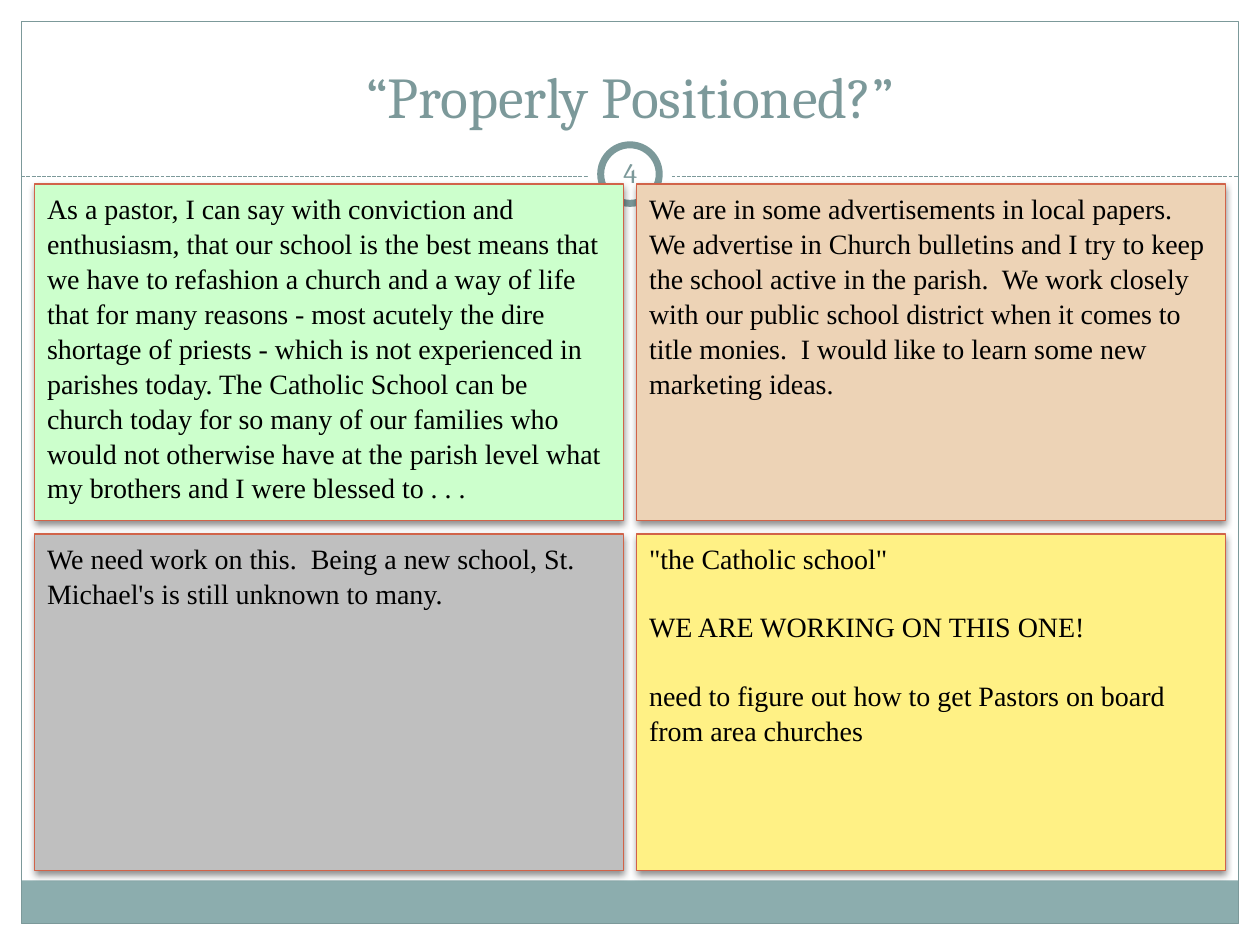
from dataclasses import dataclass
from lxml.etree import SubElement
from pptx import Presentation
from pptx.dml.color import RGBColor as RGB
from pptx.enum.dml import MSO_LINE as Dash
from pptx.enum.shapes import MSO_CONNECTOR as Link, MSO_SHAPE as Kind
from pptx.enum.text import MSO_ANCHOR as Anchor, PP_ALIGN as Align
from pptx.oxml.ns import qn
from pptx.util import Cm, Pt


@dataclass(frozen=True)
class Theme:
    """Colours, fonts and type sizes of the slide."""
    teal: str = "7C999A"
    band: str = "8CADAE"
    edge: str = "D16349"
    ink: str = "000000"
    paper: str = "FFFFFF"
    head: str = "Cambria"
    body: str = "Times New Roman"
    big: int = 33
    small: int = 16
    thin: float = 0.75
    thick: int = 4


THEME = Theme()
CARDS = [
    ("CCFFCC", ["As a pastor, I can say with conviction and enthusiasm, that our school is "
                "the best means that we have to refashion a church and a way of life that for "
                "many reasons - most acutely the dire shortage of priests - which is not "
                "experienced in parishes today. The Catholic School can be church today for so "
                "many of our families who would not otherwise have at the parish level what my "
                "brothers and I were blessed to . . ."]),
    ("EDD3B6", ["We are in some advertisements in local papers.  We advertise in Church "
                "bulletins and I try to keep the school active in the parish.  We work closely "
                "with our public school district when it comes to title monies.  I would like "
                "to learn some new marketing ideas."]),
    ("BFBFBF", ["We need work on this.  Being a new school, St. Michael's is still unknown "
                "to many."]),
    ("FFF185", ['"the Catholic school"', "WE ARE WORKING ON THIS ONE!",
                "need to figure out how to get Pastors on board from area churches"]),
]


def write(shape, lines, font=THEME.body, size=THEME.small, color=THEME.ink,
          align=Align.LEFT, anchor=Anchor.TOP, pitch=None, gap=0, inset=None):
    """Write the lines as paragraphs of the shape in one format."""
    frame = shape.text_frame
    frame.word_wrap = True
    frame.vertical_anchor = anchor
    if inset is not None:
        frame.margin_left = frame.margin_right = inset
        frame.margin_top = frame.margin_bottom = inset
    for i, line in enumerate(lines):
        para = frame.add_paragraph() if i else frame.paragraphs[0]
        para.alignment = align
        para.line_spacing = pitch
        para.space_before = Pt(gap if i else 0)
        run = para.add_run()
        run.text = line
        run.font.name, run.font.size = font, Pt(size)
        run.font.color.rgb = RGB.from_string(color)


def draw(slide, kind, box, fill=None, line=None, width=THEME.thin):
    """Add a flat preset shape in the box, given in centimetres."""
    shape = slide.shapes.add_shape(kind, *map(Cm, box))
    shape.shadow.inherit = False
    if fill:
        shape.fill.solid()
        shape.fill.fore_color.rgb = RGB.from_string(fill)
    else:
        shape.fill.background()
    if line:
        shape.line.color.rgb = RGB.from_string(line)
        shape.line.width = Pt(width)
    else:
        shape.line.fill.background()
    return shape


def shade(shape):
    """Give the shape a soft shadow straight below it."""
    effects = shape._element.spPr.find(qn("a:effectLst"))
    outer = SubElement(effects, qn("a:outerShdw"), blurRad=str(Pt(4)), dist=str(Pt(2)),
                       dir="5400000", rotWithShape="0")
    tint = SubElement(outer, qn("a:srgbClr"), val=THEME.ink)
    SubElement(tint, qn("a:alpha"), val="45000")


def add_frame(slide, box):
    """Draw the page border, its bottom band and the dashed rule."""
    left, top, wide, high = box
    foot, rule = 0.87, top + 3.13
    draw(slide, Kind.RECTANGLE, (left, top + high - foot, wide, foot), fill=THEME.band)
    draw(slide, Kind.RECTANGLE, box, line=THEME.teal)
    link = slide.shapes.add_connector(Link.STRAIGHT, Cm(left), Cm(rule),
                                      Cm(left + wide), Cm(rule))
    link.line.color.rgb = RGB.from_string(THEME.teal)
    link.line.width = Pt(THEME.thin)
    link.line.dash_style = Dash.SQUARE_DOT
    SubElement(link._element.spPr, qn("a:effectLst"))


def add_ring(slide, box):
    """Draw the white disc with the teal ring inside it."""
    left, top, wide, high = box
    pad = 0.26
    draw(slide, Kind.OVAL, box, fill=THEME.paper)
    draw(slide, Kind.OVAL, (left + pad, top + pad, wide - 2 * pad, high - 2 * pad),
         fill=THEME.paper, line=THEME.teal, width=THEME.thick)


def add_label(slide, box, text, **form):
    """Place centred teal text in the box."""
    label = slide.shapes.add_textbox(*map(Cm, box))
    write(label, [text], font=THEME.head, color=THEME.teal, align=Align.CENTER, **form)


def add_cards(slide, box, cards, cols=2, gap=0.27):
    """Lay the cards out in an even grid that fills the box."""
    left, top, wide, high = box
    rows = -(-len(cards) // cols)
    w, h = (wide - gap * (cols - 1)) / cols, (high - gap * (rows - 1)) / rows
    for i, (fill, lines) in enumerate(cards):
        row, col = divmod(i, cols)
        place = (left + col * (w + gap), top + row * (h + gap), w, h)
        card = draw(slide, Kind.RECTANGLE, place, fill=fill, line=THEME.edge)
        shade(card)
        write(card, lines, pitch=1.04, gap=19.1)


def main():
    """Build the slide and save it."""
    deck = Presentation()
    deck.slide_width, deck.slide_height = Cm(25.4), Cm(19.05)
    slide = deck.slides.add_slide(deck.slide_layouts[6])
    add_frame(slide, (0.43, 0.43, 24.54, 18.19))
    add_ring(slide, (11.85, 2.66, 1.7, 1.7))
    add_label(slide, (0.85, 0.64, 23.7, 2.11), "“Properly Positioned?”",
              size=THEME.big, anchor=Anchor.BOTTOM)
    add_cards(slide, (0.7, 3.71, 24, 13.84), CARDS)
    add_label(slide, (12.07, 2.87, 1.27, 1.22), "4", anchor=Anchor.MIDDLE, inset=Cm(0.13))
    deck.save("out.pptx")


if __name__ == "__main__":
    main()
